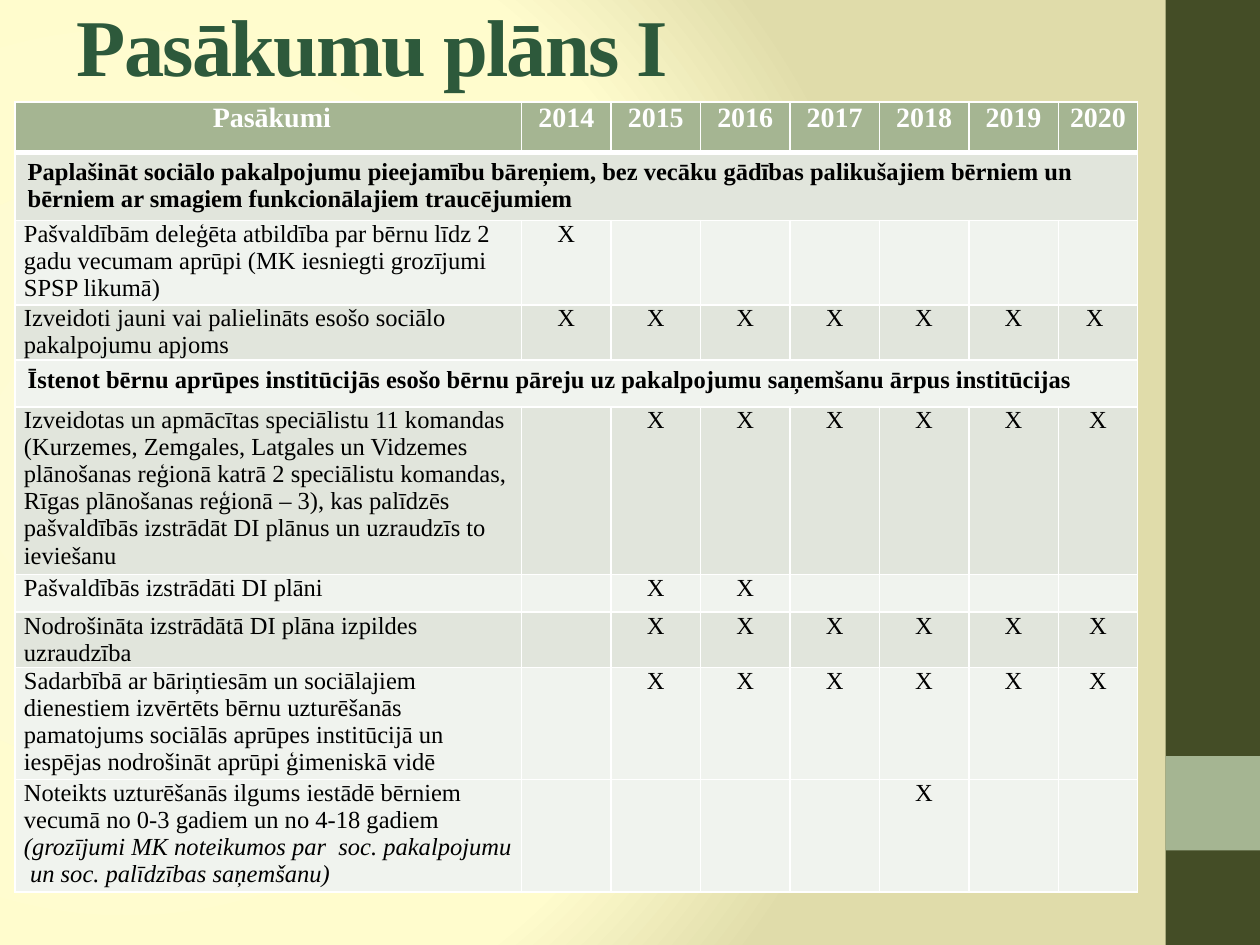
import pptx
import pptx.util
import pptx.oxml
import pptx.oxml.ns
from pptx.dml.color import RGBColor
from pptx.enum.shapes import MSO_SHAPE
from pptx.enum.text import MSO_ANCHOR, MSO_AUTO_SIZE, PP_ALIGN

Inches, Pt = pptx.util.Inches, pptx.util.Pt

FONT = "Times New Roman"
WHITE = RGBColor(0xFF, 0xFF, 0xFF)
BLACK = RGBColor(0, 0, 0)
TITLE_GREEN = RGBColor(0x2D, 0x59, 0x3B)
OLIVE = RGBColor(0x44, 0x4D, 0x26)
SAGE = RGBColor(0xA5, 0xB5, 0x92)
BAND_DARK = RGBColor(0xE1, 0xE5, 0xDC)
BAND_LIGHT = RGBColor(0xF0, 0xF3, 0xEE)
BACKGROUND = [(0, "FEFBD4"), (75, "FFFCCD"), (100, "E0DCAA")]

# Content: (row height, fill, activity, years marked); None marks a section row
TITLE = "Pasākumu plāns I"
YEARS = range(2014, 2021)
HEADER_HEIGHT = 0.4
FROM_2015 = range(2015, 2021)
ROWS = [
    (0.54, BAND_DARK, "Paplašināt sociālo pakalpojumu pieejamību bāreņiem, bez vecāku gādības "
     "palikušajiem bērniem un bērniem ar smagiem funkcionālajiem traucējumiem", None),
    (0.67, BAND_LIGHT, "Pašvaldībām deleģēta atbildība par bērnu līdz 2 gadu vecumam aprūpi "
     "(MK iesniegti grozījumi SPSP likumā)", [2014]),
    (0.44, BAND_DARK, "Izveidoti jauni vai palielināts esošo sociālo pakalpojumu apjoms", YEARS),
    (0.37, BAND_LIGHT, "Īstenot bērnu aprūpes institūcijās esošo bērnu pāreju uz pakalpojumu "
     "saņemšanu ārpus institūcijas", None),
    (1.33, BAND_DARK, "Izveidotas un apmācītas speciālistu 11 komandas (Kurzemes, Zemgales, "
     "Latgales un Vidzemes plānošanas reģionā katrā 2 speciālistu komandas, Rīgas plānošanas "
     "reģionā – 3), kas palīdzēs pašvaldībās izstrādāt DI plānus un uzraudzīs to ieviešanu",
     FROM_2015),
    (0.3, BAND_LIGHT, "Pašvaldībās izstrādāti DI plāni ", [2015, 2016]),
    (0.44, BAND_DARK, "Nodrošināta izstrādātā DI plāna izpildes uzraudzība", FROM_2015),
    (0.89, BAND_LIGHT, "Sadarbībā ar bāriņtiesām un sociālajiem dienestiem izvērtēts bērnu "
     "uzturēšanās pamatojums sociālās aprūpes institūcijā un iespējas nodrošināt aprūpi "
     "ģimeniskā vidē", FROM_2015),
    (0.89, BAND_LIGHT, "Noteikts uzturēšanās ilgums iestādē bērniem vecumā no 0-3 gadiem un no "
     "4-18 gadiem ", [2018]),
]
LAST_NOTE = "(grozījumi MK noteikumos par  soc. pakalpojumu  un soc. palīdzības saņemšanu)"
COLUMNS = [4.02] + [0.71] * 6 + [0.63]


def write(p, text, size=14, color=BLACK, bold=False, italic=False, align=PP_ALIGN.LEFT):
    p.alignment = align
    r = p.add_run()
    r.text = text
    r.font.name, r.font.size = FONT, Pt(size)
    r.font.bold, r.font.italic = bold, italic
    r.font.color.rgb = color
    return r


def style_cell(cell, fill, top=1, bottom=1, section=False):
    cell.fill.solid()
    cell.fill.fore_color.rgb = fill
    cell.margin_left = cell.margin_right = Inches(0.1 if section else 0.07)
    cell.margin_top = cell.margin_bottom = Inches(0.05 if section else 0)
    tc_pr = cell._tc.get_or_add_tcPr()
    for i, (side, width) in enumerate(zip("LRTB", (1, 1, top, bottom))):
        tc_pr.insert(i, pptx.oxml.parse_xml(
            f'<a:ln{side} {pptx.oxml.ns.nsdecls("a")} w="{Pt(width)}"><a:solidFill>'
            f'<a:srgbClr val="{WHITE}"/></a:solidFill></a:ln{side}>'))


def keep_empty_small(cell):
    p = cell.text_frame.paragraphs[0]._p
    p.append(pptx.oxml.parse_xml(f'<a:endParaRPr {pptx.oxml.ns.nsdecls("a")} sz="1400"/>'))


prs = pptx.Presentation()
prs.slide_width, prs.slide_height = Inches(10), Inches(7.5)
s = prs.slides.add_slide(prs.slide_layouts[5])

# Radial background
stops = "".join(f'<a:gs pos="{pos * 1000}"><a:srgbClr val="{color}"/></a:gs>'
                for pos, color in BACKGROUND)
s._element.cSld.insert(0, pptx.oxml.parse_xml(
    f'<p:bg {pptx.oxml.ns.nsdecls("p", "a")}><p:bgPr><a:gradFill rotWithShape="1">'
    f'<a:gsLst>{stops}</a:gsLst><a:path path="circle">'
    '<a:fillToRect l="20000" t="50000" r="100000" b="50000"/></a:path></a:gradFill>'
    '<a:effectLst/></p:bgPr></p:bg>'))

# Side band with its accent square
for top, height, color in [(0, 7.5, OLIVE), (6, 0.75, SAGE)]:
    sp = s.shapes.add_shape(MSO_SHAPE.RECTANGLE, Inches(9.25), Inches(top),
                            Inches(0.75), Inches(height))
    sp.shadow.inherit = False
    sp.fill.solid()
    sp.fill.fore_color.rgb = color
    sp.line.fill.background()

# Title
title = s.shapes.title
title.left, title.top, title.width, title.height = map(Inches, (0.51, 0.05, 8.33, 0.61))
tf = title.text_frame
tf.auto_size = MSO_AUTO_SIZE.NONE
tf.vertical_anchor = MSO_ANCHOR.MIDDLE
r = write(tf.paragraphs[0], TITLE, size=46, color=TITLE_GREEN, bold=True)
r.font._element.set("spc", "-100")

# Table grid
heights = [HEADER_HEIGHT] + [row[0] for row in ROWS]
table = s.shapes.add_table(len(heights), len(COLUMNS), Inches(0.12), Inches(0.81),
                           Inches(sum(COLUMNS)), Inches(sum(heights))).table
for column, width in zip(table.columns, COLUMNS):
    column.width = Inches(width)
for row, height in zip(table.rows, heights):
    row.height = Inches(height)

# Header row
for c, text in enumerate([" Pasākumi", *map(str, YEARS)]):
    cell = table.cell(0, c)
    style_cell(cell, SAGE, bottom=3)
    write(cell.text_frame.paragraphs[0], text, size=16, color=WHITE, bold=True,
          align=PP_ALIGN.CENTER)

# Section and activity rows
for i, (_, fill, activity, marked) in enumerate(ROWS, start=1):
    section = marked is None
    for c in range(len(COLUMNS)):
        style_cell(table.cell(i, c), fill, top=3 if i == 1 else 1, section=section)
    first = table.cell(i, 0)
    if section:
        first.merge(table.cell(i, len(COLUMNS) - 1))
    write(first.text_frame.paragraphs[0], activity, bold=section)
    for c, year in enumerate(YEARS, start=1):
        cell = table.cell(i, c)
        if section or year not in marked:
            keep_empty_small(cell)
        else:
            mark = "X " if marked is YEARS and year == 2020 else "X"
            write(cell.text_frame.paragraphs[0], mark, align=PP_ALIGN.CENTER)
write(table.cell(len(ROWS), 0).text_frame.paragraphs[0], LAST_NOTE, italic=True)

prs.save("out.pptx")
